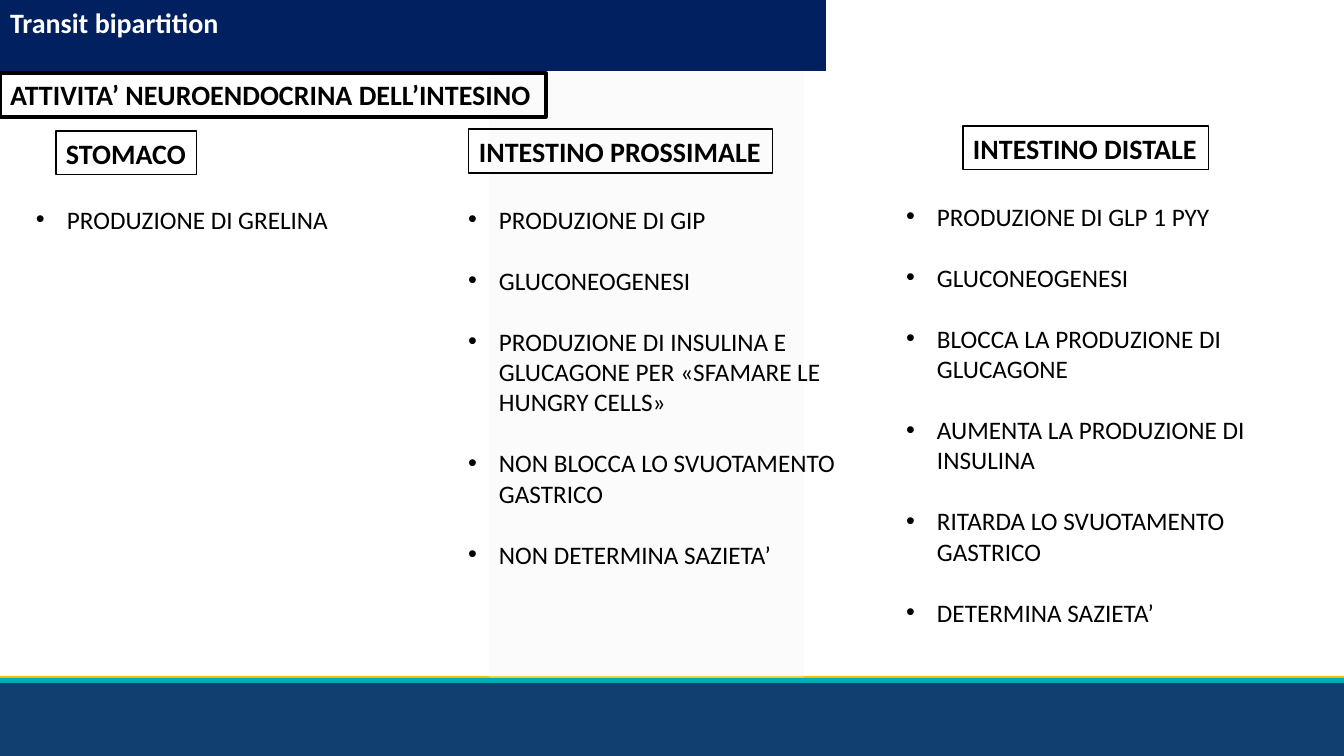
"""Build the slide on neuroendocrine activity of the intestine."""
from lxml.etree import SubElement
from pptx import Presentation
from pptx.dml.color import RGBColor
from pptx.enum.shapes import MSO_SHAPE as Shape
from pptx.enum.text import MSO_ANCHOR as Anchor, MSO_AUTO_SIZE as AutoSize, PP_ALIGN as Align
from pptx.oxml.ns import qn
from pptx.util import Pt

COLORS = {
    "gold": "FFC000", "blue": "113F6F", "panel": "F2F2F2", "teal": "00ACB6",
    "navy": "002060", "white": "FFFFFF", "black": "000000",
}
TITLE = "Transit bipartition"
SUBTITLE = "ATTIVITA’ NEUROENDOCRINA DELL’INTESINO"
BANDS = [
    ("gold", (0, 676, 1344, 5)),
    ("blue", (0, 681, 1344, 75)),
    ("panel", (489, 0, 315, 680)),
    ("teal", (0, 678, 1344, 5)),
]
COLUMNS = [
    ("STOMACO", (56, 131, 141, 44), (26, 199), ["PRODUZIONE DI GRELINA"]),
    ("INTESTINO PROSSIMALE", (469, 129, 304, 44), (458, 199), [
        "PRODUZIONE DI GIP",
        "GLUCONEOGENESI",
        "PRODUZIONE DI INSULINA E GLUCAGONE PER «SFAMARE LE HUNGRY CELLS»",
        "NON BLOCCA LO SVUOTAMENTO GASTRICO",
        "NON DETERMINA SAZIETA’",
    ]),
    ("INTESTINO DISTALE", (963, 126, 246, 44), (896, 196), [
        "PRODUZIONE DI GLP 1 PYY",
        "GLUCONEOGENESI",
        "BLOCCA LA PRODUZIONE DI GLUCAGONE",
        "AUMENTA LA PRODUZIONE DI INSULINA",
        "RITARDA LO SVUOTAMENTO GASTRICO",
        "DETERMINA SAZIETA’",
    ]),
]
LIST_WIDTH, LIST_HEIGHT, INDENT = 423, 468, 31
EMU_PER_PX = 914400 / 100.8


def px(length):
    return round(length * EMU_PER_PX)


def apply(target, values):
    for name, value in values.items():
        setattr(target, name, value)


def rgb(name):
    return RGBColor.from_string(COLORS[name])


def place(box, area):
    apply(box, dict(zip(("left", "top", "width", "height"), map(px, area))))


def add_box(page, area, fill=None):
    box = page.shapes.add_shape(Shape.RECTANGLE, *map(px, area))
    box.shadow.inherit = False
    box.line.fill.background()
    if fill:
        box.fill.solid()
        box.fill.fore_color.rgb = rgb(fill)
    else:
        box.fill.background()
    return box


def outline(box, width):
    box.line.color.rgb = rgb("black")
    box.line.width = Pt(width)


def add_bullet(para):
    props = para._p.get_or_add_pPr()
    props.set("marL", str(px(INDENT)))
    props.set("indent", str(-px(INDENT)))
    SubElement(props, qn("a:buFont")).set("typeface", "Arial")
    SubElement(props, qn("a:buChar")).set("char", "•")


def write(box, lines, size=20, bold=True, color="black", bullets=False):
    frame = box.text_frame
    frame.text = "\n".join(lines)
    apply(frame, {
        "word_wrap": True, "auto_size": AutoSize.NONE, "vertical_anchor": Anchor.TOP,
        "margin_left": px(10), "margin_right": px(10 if bullets else 0),
        "margin_top": px(5), "margin_bottom": px(5),
    })
    for index, para in enumerate(frame.paragraphs):
        apply(para, {
            "alignment": Align.LEFT, "line_spacing": 1.0,
            "space_before": Pt(22 if index else 0), "space_after": Pt(0),
        })
        if bullets:
            add_bullet(para)
        else:
            props = para._p.get_or_add_pPr()
            props.set("marL", "0")
            props.set("indent", "0")
        for span in para.runs:
            apply(span.font, {"name": "Calibri", "size": Pt(size), "bold": bold})
            span.font.color.rgb = rgb(color)


def add_bands(page):
    for index, (color, area) in enumerate(BANDS):
        band = add_box(page, area, color)
        if color == "panel":
            tint = band.element.spPr.find(qn("a:solidFill"))[0]
            SubElement(tint, qn("a:alpha")).set("val", "30000")
        band.element.getparent().insert(2 + index, band.element)


def main():
    deck = Presentation()
    apply(deck, {"slide_width": px(1344), "slide_height": px(756)})
    page = deck.slides.add_slide(deck.slide_layouts[4])
    add_bands(page)
    title, subtitle, *lists = page.placeholders

    place(title, (0, 0, 826, 71))
    title.fill.solid()
    title.fill.fore_color.rgb = rgb("navy")
    write(title, [TITLE], color="white")

    place(subtitle, (0, 73, 546, 44))
    outline(subtitle, 2.25)
    write(subtitle, [SUBTITLE])

    for body, (heading, area, corner, items) in zip(lists, COLUMNS):
        label = add_box(page, area)
        outline(label, 0.75)
        write(label, [heading])
        place(body, (*corner, LIST_WIDTH, LIST_HEIGHT))
        write(body, items, size=18, bold=False, bullets=True)

    deck.save("out.pptx")


if __name__ == "__main__":
    main()
